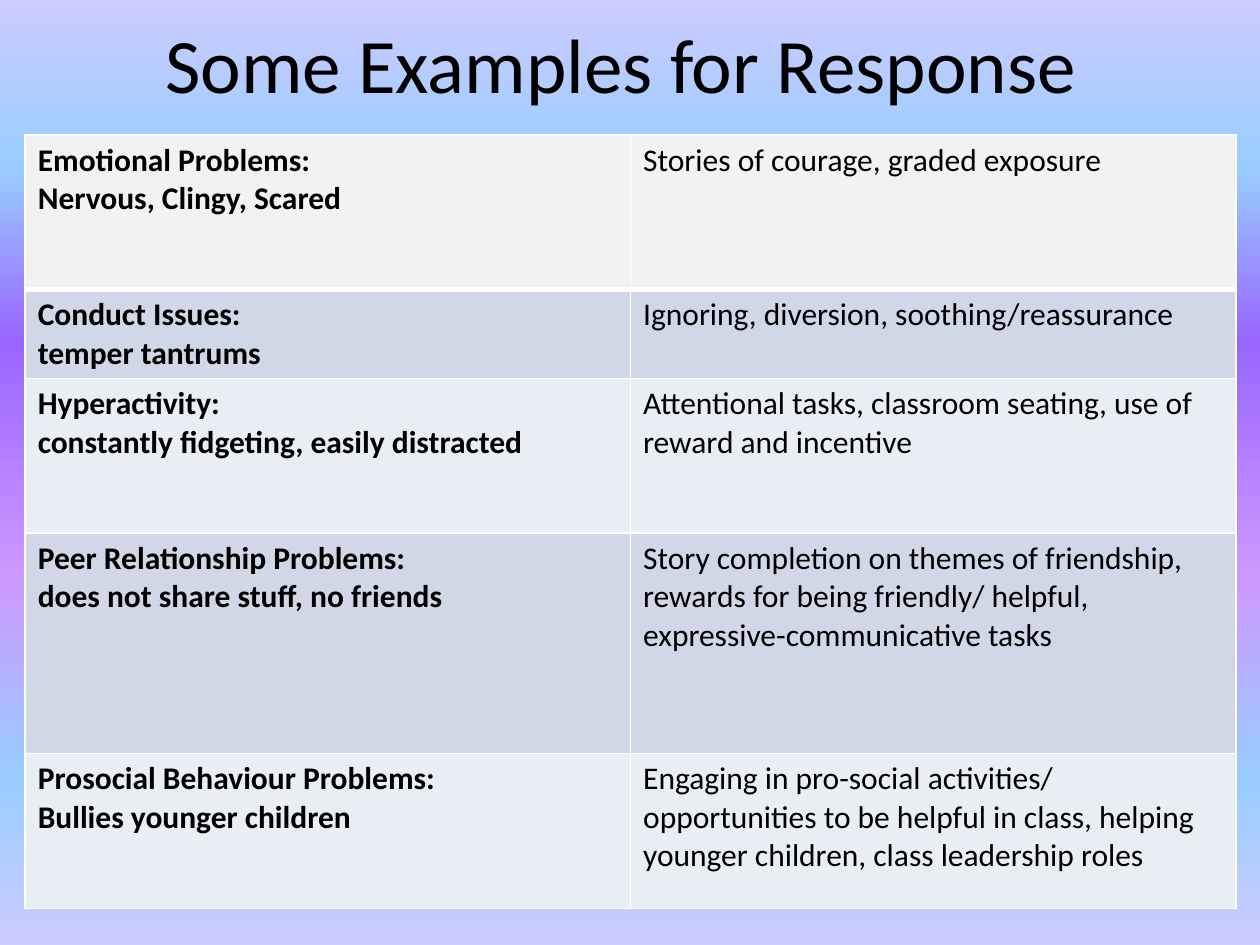
"""Build a slide with a table of example responses to children's difficulties."""
from dataclasses import dataclass

from lxml.etree import SubElement
from pptx import Presentation
from pptx.dml.color import RGBColor
from pptx.enum.text import MSO_ANCHOR, PP_ALIGN
from pptx.oxml.ns import qn
from pptx.util import Inches, Pt


@dataclass(frozen=True)
class Theme:
    font: str = "Calibri"
    title_size: int = 44
    body_size: int = 18
    ink: str = "000000"
    border: str = "FFFFFF"
    header: str = "F2F2F2"
    bands: tuple = ("E9EDF4", "D0D8E8")
    background: tuple = (
        (0, "CCCCFF"), (18, "99CCFF"), (36, "9966FF"),
        (61, "CC99FF"), (82, "99CCFF"), (100, "CCCCFF"),
    )


def style_paragraph(paragraph, size, bold=False):
    paragraph.font.name = theme.font
    paragraph.font.size = Pt(size)
    paragraph.font.bold = bold
    paragraph.font.color.rgb = RGBColor.from_string(theme.ink)


def add_border(cell, side, points):
    properties = cell._tc.get_or_add_tcPr()
    line = SubElement(properties, qn(f"a:ln{side}"), w=str(Pt(points)))
    fill = SubElement(line, qn("a:solidFill"))
    SubElement(fill, qn("a:srgbClr"), val=theme.border)


theme = Theme()
responses = [
    ("Emotional Problems:\nNervous, Clingy, Scared",
     "Stories of courage, graded exposure"),
    ("Conduct Issues:\ntemper tantrums",
     "Ignoring, diversion, soothing/reassurance"),
    ("Hyperactivity:\nconstantly fidgeting, easily distracted",
     "Attentional tasks, classroom seating, use of reward and incentive"),
    ("Peer Relationship Problems:\ndoes not share stuff, no friends",
     "Story completion on themes of friendship, rewards for being friendly/ helpful, "
     "expressive-communicative tasks"),
    ("Prosocial Behaviour Problems:\nBullies younger children",
     "Engaging in pro-social activities/ opportunities to be helpful in class, "
     "helping younger children, class leadership roles"),
]
row_shares = [0.2, 0.115, 0.2, 0.285, 0.2]

presentation = Presentation()
presentation.slide_width = Inches(10)
presentation.slide_height = Inches(7.5)
slide = presentation.slides.add_slide(presentation.slide_layouts[6])

background = slide.background.fill
background.gradient()
background.gradient_angle = 270
stops = slide.element.find(".//" + qn("a:gsLst"))
stops.clear()
for percent, color in theme.background:
    stop = SubElement(stops, qn("a:gs"), pos=str(percent * 1000))
    SubElement(stop, qn("a:srgbClr"), val=color)

title = slide.shapes.add_textbox(Inches(0.43), 0, Inches(9), Inches(0.99))
title.text_frame.word_wrap = True
title.text_frame.vertical_anchor = MSO_ANCHOR.MIDDLE
title.text_frame.text = "Some Examples for Response"
title.text_frame.paragraphs[0].alignment = PP_ALIGN.CENTER
style_paragraph(title.text_frame.paragraphs[0], theme.title_size)

table_width, table_height = Inches(9.61), Inches(6.14)
table = slide.shapes.add_table(
    len(responses), 2, Inches(0.2), Inches(1.07), table_width, table_height
).table
table.first_row = False
table.horz_banding = False

for row_index, (texts, share) in enumerate(zip(responses, row_shares)):
    table.rows[row_index].height = int(table_height * share)
    row_color = theme.bands[row_index % 2] if row_index else theme.header
    for column_index, text in enumerate(texts):
        cell = table.cell(row_index, column_index)
        cell.text = text
        for paragraph in cell.text_frame.paragraphs:
            style_paragraph(paragraph, theme.body_size, bold=column_index == 0)
        for side in "LRTB":
            heavy = (row_index, side) in ((0, "B"), (1, "T"))
            add_border(cell, side, 3 if heavy else 1)
        cell.fill.solid()
        cell.fill.fore_color.rgb = RGBColor.from_string(row_color)

presentation.save("out.pptx")
